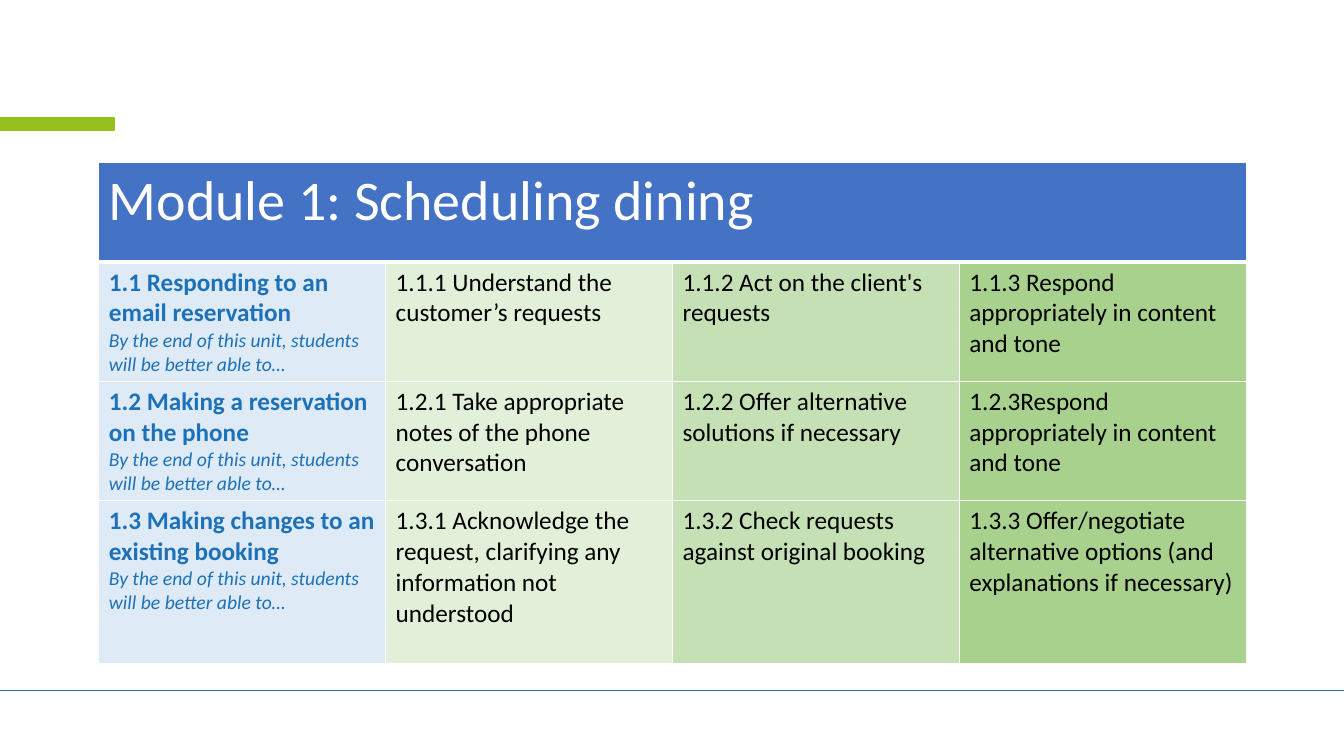
from dataclasses import dataclass

from lxml import etree
from pptx import Presentation
from pptx.dml.color import RGBColor
from pptx.enum.shapes import MSO_CONNECTOR, MSO_SHAPE
from pptx.oxml.ns import qn
from pptx.util import Inches, Pt

STRAIGHT = MSO_CONNECTOR.STRAIGHT
RECTANGLE = MSO_SHAPE.RECTANGLE
BLANK_LAYOUT = 6


@dataclass(frozen=True)
class Theme:
    font: str = "Calibri"
    title_size: int = 40
    body_size: int = 18
    note_size: int = 14
    white: str = "FFFFFF"
    black: str = "000000"
    blue: str = "1D71B8"
    lime: str = "95C11F"
    header_fill: str = "4472C4"
    column_fills: tuple = ("DEEBF7", "E2F0D9", "C5E0B4", "A9D18E")


MODULE_TITLE = "Module 1: Scheduling dining"
UNIT_NOTE = "By the end of this unit, students will be better able to…"
UNITS = [
    ("1.1 Responding to an email reservation",
     "1.1.1 Understand the customer’s requests",
     "1.1.2 Act on the client's requests",
     "1.1.3 Respond appropriately in content and tone"),
    ("1.2 Making a reservation on the phone",
     "1.2.1 Take appropriate notes of the phone conversation",
     "1.2.2 Offer alternative solutions if necessary",
     "1.2.3Respond appropriately in content and tone"),
    ("1.3 Making changes to an existing booking",
     "1.3.1 Acknowledge the request, clarifying any information not understood",
     "1.3.2 Check requests against original booking",
     "1.3.3 Offer/negotiate alternative options (and explanations if necessary)"),
]
ROW_HEIGHTS = (0.99, 1.18, 1.18, 1.62)


def write(paragraph, text, *, font, size, color, bold=False, italic=False):
    run = paragraph.add_run()
    run.text = text
    run.font.name = font
    run.font.size = Pt(size)
    run.font.color.rgb = RGBColor.from_string(color)
    run.font.bold = bold
    run.font.italic = italic


def set_borders(cell, color, bottom=1):
    """Line all four sides at 1 pt, with an optional heavier bottom."""
    properties = cell._tc.get_or_add_tcPr()
    for side, width in (("L", 1), ("R", 1), ("T", 1), ("B", bottom)):
        line = etree.SubElement(properties, qn(f"a:ln{side}"), w=str(Pt(width)))
        solid = etree.SubElement(line, qn("a:solidFill"))
        etree.SubElement(solid, qn("a:srgbClr"), val=color)


class SlideBuilder:
    def __init__(self, slide, theme):
        self.slide = slide
        self.theme = theme

    def rule(self, y, width):
        rule = self.slide.shapes.add_connector(
            STRAIGHT, 0, Inches(y), Inches(width), Inches(y))
        rule.line.color.rgb = RGBColor.from_string(self.theme.blue)
        rule.line.width = Pt(1)
        etree.SubElement(rule._element.spPr, qn("a:effectLst"))

    def accent_bar(self, left, top, width, height):
        bar = self.slide.shapes.add_shape(
            RECTANGLE, Inches(left), Inches(top), Inches(width), Inches(height))
        bar.shadow.inherit = False
        lime = RGBColor.from_string(self.theme.lime)
        bar.fill.solid()
        bar.fill.fore_color.rgb = lime
        bar.line.color.rgb = lime
        bar.line.width = Pt(1)

    def style_cell(self, cell, fill, bottom=1):
        set_borders(cell, self.theme.white, bottom)
        cell.fill.solid()
        cell.fill.fore_color.rgb = RGBColor.from_string(fill)

    def module_table(self, left, top, width):
        theme = self.theme
        columns = len(theme.column_fills)
        table = self.slide.shapes.add_table(
            len(ROW_HEIGHTS), columns, Inches(left), Inches(top),
            Inches(width), Inches(sum(ROW_HEIGHTS))).table
        table.first_row = table.horz_banding = False
        for row, height in zip(table.rows, ROW_HEIGHTS):
            row.height = Inches(height)

        for header_cell in table.rows[0].cells:
            self.style_cell(header_cell, theme.header_fill, bottom=3)
        header = table.cell(0, 0)
        header.merge(table.cell(0, columns - 1))
        write(header.text_frame.paragraphs[0], MODULE_TITLE,
              font=theme.font, size=theme.title_size, color=theme.white)

        for row_index, unit in enumerate(UNITS, start=1):
            for column, (text, fill) in enumerate(zip(unit, theme.column_fills)):
                cell = table.cell(row_index, column)
                self.style_cell(cell, fill)
                is_unit = column == 0
                write(cell.text_frame.paragraphs[0], text,
                      font=theme.font, size=theme.body_size, bold=is_unit,
                      color=theme.blue if is_unit else theme.black)
                if is_unit:
                    write(cell.text_frame.add_paragraph(), UNIT_NOTE,
                          font=theme.font, size=theme.note_size,
                          color=theme.blue, italic=True)


def main():
    presentation = Presentation()
    presentation.slide_width = Inches(13.33)
    presentation.slide_height = Inches(7.5)
    slide = presentation.slides.add_slide(presentation.slide_layouts[BLANK_LAYOUT])
    builder = SlideBuilder(slide, Theme())
    builder.rule(6.85, 13.33)
    builder.accent_bar(0, 1.17, 1.13, 0.12)
    builder.module_table(0.98, 1.61, 11.38)
    presentation.save("out.pptx")


if __name__ == "__main__":
    main()
